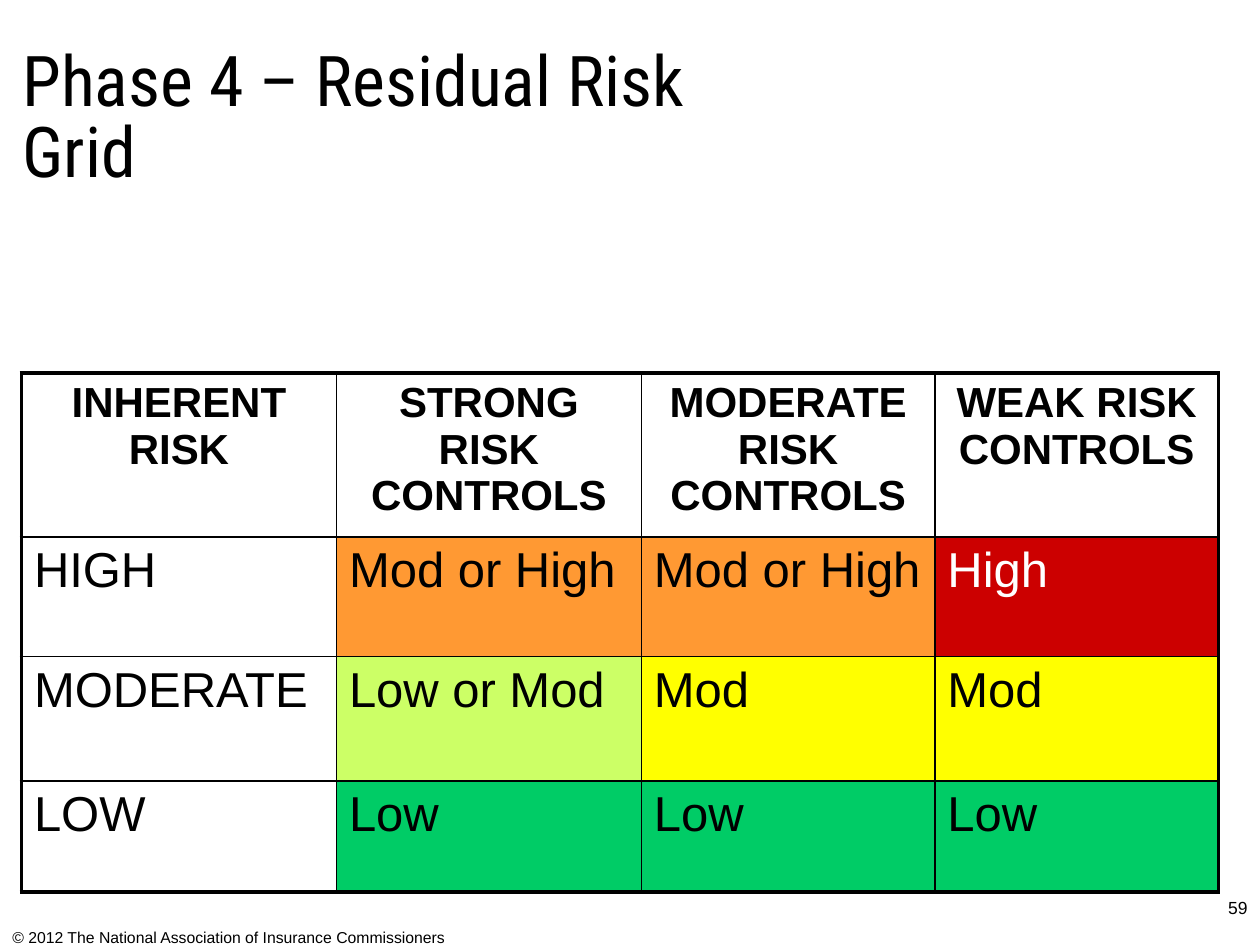
from lxml.etree import SubElement
from pptx import Presentation
from pptx.dml.color import RGBColor
from pptx.enum.text import MSO_ANCHOR, PP_ALIGN
from pptx.oxml.ns import qn
from pptx.util import Inches, Pt

BLACK = RGBColor(0x00, 0x00, 0x00)
WHITE = RGBColor(0xFF, 0xFF, 0xFF)
ORANGE = RGBColor(0xFF, 0x99, 0x33)
RED = RGBColor(0xCC, 0x00, 0x00)
LIME = RGBColor(0xCC, 0xFF, 0x66)
YELLOW = RGBColor(0xFF, 0xFF, 0x00)
GREEN = RGBColor(0x00, 0xCC, 0x66)

TITLE = "Phase 4 – Residual Risk Grid"
COPYRIGHT = "© 2012 The National Association of Insurance Commissioners"
PAGE_NUMBER = "59"
RISK_GRID = [
    ["INHERENT RISK", "STRONG RISK CONTROLS", "MODERATE RISK CONTROLS", "WEAK RISK CONTROLS"],
    ["HIGH", "Mod or High", "Mod or High", "High"],
    ["MODERATE", "Low or Mod", "Mod", "Mod"],
    ["LOW", "Low", "Low", "Low"],
]
RATING_COLORS = {
    "Mod or High": ORANGE,
    "High": RED,
    "Low or Mod": LIME,
    "Mod": YELLOW,
    "Low": GREEN,
}
COLUMN_WIDTHS = [2.5, 2.42, 2.33, 2.25]
ROW_HEIGHTS = [1.3, 0.95, 0.99, 0.88]
OUTER_LINE, INNER_LINE = Pt(2.25), Pt(1)


def style(paragraph, size, font="Arial", color=BLACK, bold=False, align=PP_ALIGN.LEFT):
    paragraph.alignment = align
    paragraph.font.name = font
    paragraph.font.size = Pt(size)
    paragraph.font.bold = bold
    paragraph.font.color.rgb = color


def add_text(slide, text, box, size, anchor=MSO_ANCHOR.TOP, line_spacing=None, **look):
    frame = slide.shapes.add_textbox(*map(Inches, box)).text_frame
    frame.word_wrap = True
    frame.vertical_anchor = anchor
    frame.text = text
    paragraph = frame.paragraphs[0]
    paragraph.line_spacing = line_spacing
    style(paragraph, size, **look)


def set_borders(cell, widths):
    """Draw black cell borders; widths are left, right, top, bottom."""
    properties = cell._tc.get_or_add_tcPr()
    for side, width in zip("LRTB", widths):
        line = SubElement(properties, qn(f"a:ln{side}"), w=str(int(width)))
        fill = SubElement(line, qn("a:solidFill"))
        SubElement(fill, qn("a:srgbClr"), val=str(BLACK))


def add_risk_grid(slide):
    last_row, last_column = len(ROW_HEIGHTS) - 1, len(COLUMN_WIDTHS) - 1
    table = slide.shapes.add_table(
        len(ROW_HEIGHTS), len(COLUMN_WIDTHS), Inches(0.17), Inches(2.96),
        Inches(sum(COLUMN_WIDTHS)), Inches(sum(ROW_HEIGHTS))).table
    table.first_row = table.horz_banding = False
    for column, width in zip(table.columns, COLUMN_WIDTHS):
        column.width = Inches(width)
    for row, height in zip(table.rows, ROW_HEIGHTS):
        row.height = Inches(height)

    for r, labels in enumerate(RISK_GRID):
        for c, label in enumerate(labels):
            cell = table.cell(r, c)
            on_edge = (c == 0, c == last_column, r == 0, r == last_row)
            set_borders(cell, [OUTER_LINE if edge else INNER_LINE for edge in on_edge])
            rating_color = RATING_COLORS.get(label)
            if rating_color is None:
                cell.fill.background()
            else:
                cell.fill.solid()
                cell.fill.fore_color.rgb = rating_color
            cell.text = label
            paragraph = cell.text_frame.paragraphs[0]
            if r == 0:
                style(paragraph, 24, bold=True, align=PP_ALIGN.CENTER)
            else:
                style(paragraph, 28, color=WHITE if rating_color == RED else BLACK)


def main():
    presentation = Presentation()
    presentation.slide_width, presentation.slide_height = Inches(10), Inches(7.5)
    slide = presentation.slides.add_slide(presentation.slide_layouts[6])
    add_text(slide, COPYRIGHT, (0, 7.31, 5.58, 0.25), 9)
    add_text(slide, TITLE, (0.08, 0.33, 6.08, 1.25), 40,
             anchor=MSO_ANCHOR.MIDDLE, line_spacing=0.85, font="Roboto Condensed")
    add_risk_grid(slide)
    add_text(slide, PAGE_NUMBER, (7.67, 7.07, 2.33, 0.27), 10, align=PP_ALIGN.RIGHT)
    presentation.save("out.pptx")


if __name__ == "__main__":
    main()
